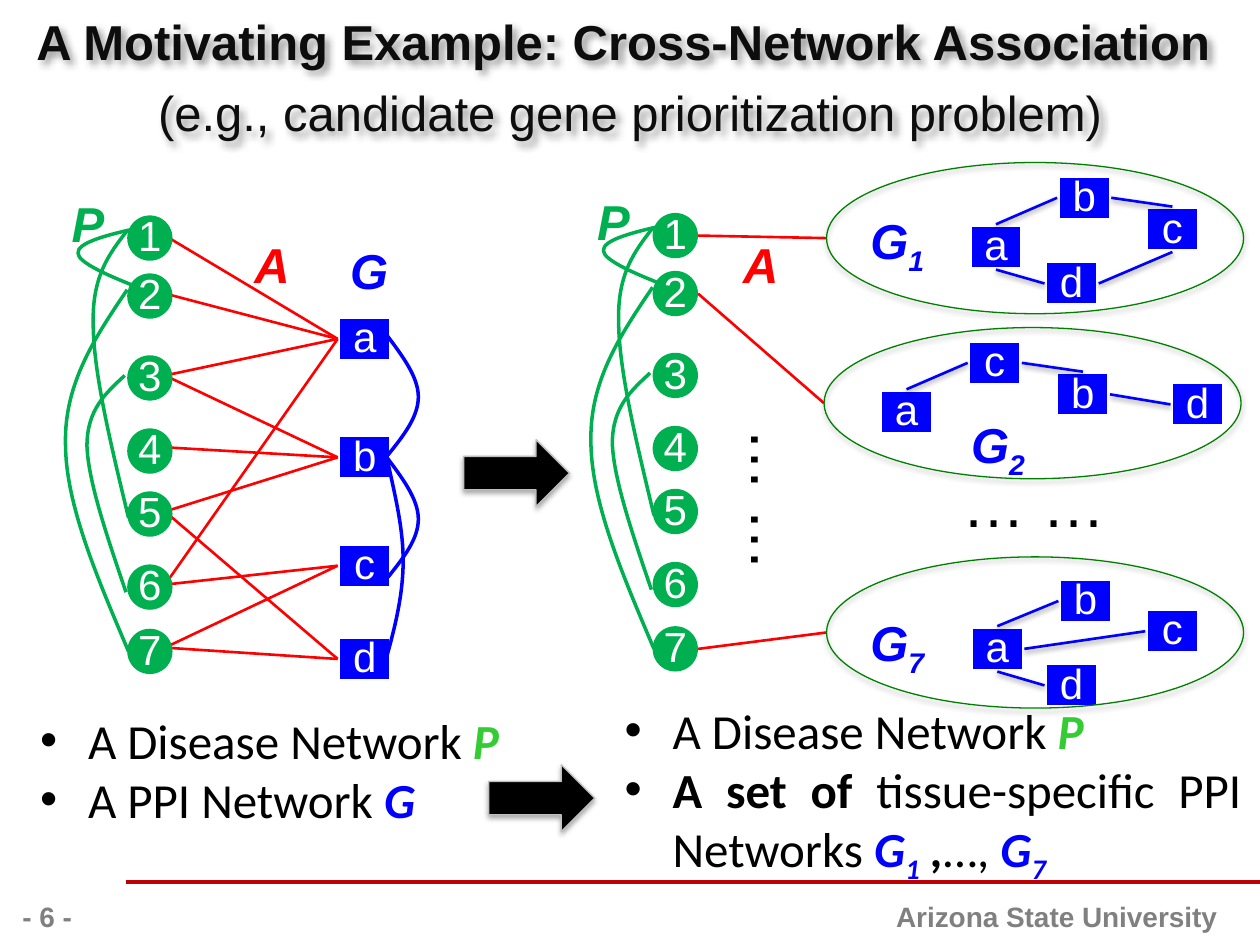
from lxml import etree
from pptx import Presentation
from pptx.dml.color import RGBColor
from pptx.enum.shapes import MSO_CONNECTOR as CONN, MSO_SHAPE as SHAPE
from pptx.enum.text import MSO_ANCHOR as ANCHOR, PP_ALIGN as ALIGN
from pptx.oxml import parse_xml
from pptx.oxml.ns import nsdecls, qn
from pptx.util import Inches, Pt

COLORS = {
    "black": "000000", "white": "FFFFFF", "title": "0D0D0D", "gray": "808080",
    "silver": "BFBFBF", "rule": "C00000", "red": "FF0000", "blue": "0000FF",
    "green": "00B050", "lime": "33CC33", "oval": "008000",
}
NODE, GENE_W, GENE_H = 0.36, 0.43, 0.36
BOLD_ITALIC = {"bold": True, "italic": True}


def rgb(name):
    return RGBColor.from_string(COLORS[name])


def shadow_xml(alpha, blur, dist, angle=90):
    return parse_xml(
        f'<a:effectLst {nsdecls("a")}><a:outerShdw blurRad="{Pt(blur)}" '
        f'dist="{Pt(dist)}" dir="{angle * 60000}" rotWithShape="0">'
        f'<a:srgbClr val="{COLORS["black"]}"><a:alpha val="{alpha * 1000}"/>'
        f'</a:srgbClr></a:outerShdw></a:effectLst>')


def add_text(p, text, size=28, color="black", font="Arial", bold=False,
             italic=False, sub=False):
    r = p.add_run()
    r.text = text
    r.font.size, r.font.name = Pt(size), font
    r.font.bold, r.font.italic = bold, italic
    r.font.color.rgb = rgb(color)
    if sub:
        r._r.get_or_add_rPr().set("baseline", "-25000")
    return r


class Diagram:
    def __init__(self, slide):
        self.s = slide

    def box(self, x, y, w, h, align=ALIGN.LEFT, wrap=True):
        sp = self.s.shapes.add_textbox(Inches(x), Inches(y), Inches(w), Inches(h))
        sp.text_frame.word_wrap = wrap
        sp.text_frame.paragraphs[0].alignment = align
        return sp

    def label(self, x, y, text, color, w=0.5, sub=None):
        p = self.box(x, y, w, 0.57, wrap=False).text_frame.paragraphs[0]
        add_text(p, text, color=color, **BOLD_ITALIC)
        if sub:
            add_text(p, sub, color=color, sub=True, **BOLD_ITALIC)

    def dots(self, x, y, rotation=0):
        sp = self.box(x, y, 1.35, 0.71, wrap=False)
        sp.rotation = rotation
        add_text(sp.text_frame.paragraphs[0], "… …", size=36)

    def bullets(self, x, y, h, items):
        tf = self.box(x, y, 5.59, h).text_frame
        for i, runs in enumerate(items):
            p = tf.add_paragraph() if i else tf.paragraphs[0]
            p.alignment, p.level = ALIGN.JUSTIFY, 1
            ppr = p._p.get_or_add_pPr()
            ppr.set("marL", str(Inches(0.88)))
            ppr.set("indent", str(Inches(-0.38)))
            etree.SubElement(ppr, qn("a:buFont"), typeface="Arial")
            etree.SubElement(ppr, qn("a:buChar"), char="•")
            for text, fmt in runs:
                add_text(p, text, font="Calibri", **fmt)

    def shape(self, kind, x, y, w, h, fill=None, line=None, width=1, shadow=False):
        sp = self.s.shapes.add_shape(kind, Inches(x), Inches(y), Inches(w), Inches(h))
        sp.shadow.inherit = False
        if fill:
            sp.fill.solid()
            sp.fill.fore_color.rgb = rgb(fill)
        else:
            sp.fill.background()
        if line:
            sp.line.color.rgb, sp.line.width = rgb(line), Pt(width)
        else:
            sp.line.fill.background()
        if shadow:
            sppr = sp._element.spPr
            sppr.replace(sppr.find(qn("a:effectLst")), shadow_xml(35, 3.1, 1.8))
        return sp

    def node(self, kind, text, x, y, w, h, **style):
        tf = self.shape(kind, x, y, w, h, **style).text_frame
        tf.margin_left = tf.margin_right = tf.margin_top = 0
        tf.margin_bottom = Inches(0.05)
        tf.vertical_anchor = ANCHOR.MIDDLE
        tf.paragraphs[0].alignment = ALIGN.CENTER
        add_text(tf.paragraphs[0], text, size=24, color="white")

    def gene(self, text, x, y):
        self.node(SHAPE.RECTANGLE, text, x, y, GENE_W, GENE_H,
                  fill="blue", line="white", width=3)

    def line(self, start, end, color, width=1.5, shadow=False):
        ln = self.s.shapes.add_connector(
            CONN.STRAIGHT, *(Inches(v) for v in (*start, *end)))
        ln.line.color.rgb, ln.line.width = rgb(color), Pt(width)
        ln._element.spPr.append(shadow_xml(38, 3.1, 1.6) if shadow else
                                parse_xml(f'<a:effectLst {nsdecls("a")}/>'))

    def curve(self, color, start, *beziers):
        """Draw joined cubic Béziers, each given as six coordinates."""
        points = [(Inches(b[i]), Inches(b[i + 1])) for b in beziers for i in (0, 2, 4)]
        builder = self.s.shapes.build_freeform(Inches(start[0]), Inches(start[1]))
        builder.add_line_segments(points, close=False)
        sp = builder.convert_to_shape()
        # Turn every three line segments into one cubic segment
        segments = list(sp._element.spPr.iter(qn("a:lnTo")))
        for i in range(0, len(segments), 3):
            cubic = etree.Element(qn("a:cubicBezTo"))
            segments[i].addprevious(cubic)
            for segment in segments[i:i + 3]:
                cubic.append(segment[0])
                segment.getparent().remove(segment)
        sp.shadow.inherit = False
        sp.fill.background()
        sp.line.color.rgb, sp.line.width = rgb(color), Pt(2)

    def disease_network(self, dx, dy):
        for i, y in enumerate((1.71, 2.17, 2.82, 3.4, 3.9, 4.48, 4.99), 1):
            self.node(SHAPE.OVAL, str(i), 1.01 + dx, y + dy, NODE, NODE, fill="green")
        links = (
            ((1.01, 1.83), (0.87, 2.01, 0.73, 2.19, 0.74, 2.57),
             (0.74, 2.95, 0.88, 3.53, 1.02, 4.11)),
            ((0.99, 2.98), (0.84, 3.12, 0.69, 3.25, 0.69, 3.54),
             (0.7, 3.82, 0.85, 4.26, 1, 4.7)),
            ((1.01, 2.3), (0.76, 2.67, 0.51, 3.04, 0.52, 3.52),
             (0.52, 4, 0.77, 4.58, 1.02, 5.17)),
            ((1.05, 1.82), (0.83, 1.87, 0.61, 1.93, 0.62, 2.01),
             (0.62, 2.08, 0.84, 2.18, 1.07, 2.27)),
        )
        for link in links:
            self.curve("green", *([v + (dy if i % 2 else dx) for i, v in enumerate(part)]
                                  for part in link))
        self.label(0.47 + dx, 1.49 + dy, "P", "green", w=0.46)

    def tissue_network(self, x, y, sub, label_at, genes, edges):
        """Edges read like 'at bl': top of gene a to left of gene b."""
        self.label(*label_at, "G", "blue", w=0.73, sub=sub)
        for name, at in genes.items():
            self.gene(name, *at)
        sides = {"l": (0, 0.5), "r": (1, 0.5), "t": (0.5, 0), "b": (0.5, 1)}
        for edge in edges:
            ends = []
            for name, side in edge.split():
                (gx, gy), (fx, fy) = genes[name], sides[side]
                ends.append((gx + fx * GENE_W, gy + fy * GENE_H))
            self.line(*ends, "blue", shadow=True)
        self.shape(SHAPE.OVAL, x, y, 3.31, 1.2, line="oval", width=0.75, shadow=True)


def main():
    prs = Presentation()
    prs.slide_width, prs.slide_height = Inches(10), Inches(7.5)
    d = Diagram(prs.slides.add_slide(prs.slide_layouts[6]))

    # Footer and title
    d.line((1, 7), (10, 7), "rule", 2)
    for x, w, align, text in ((4.92, 4.84, ALIGN.RIGHT, "Arizona State University"),
                              (0, 0.75, ALIGN.CENTER, "- 6 -")):
        p = d.box(x, 7.09, w, 0.41, align).text_frame.paragraphs[0]
        add_text(p, text, size=16, color="gray", bold=True)
    title = d.box(0, 0.12, 10, 0.88, ALIGN.CENTER)
    title._element.spPr.append(shadow_xml(40, 4, 3, angle=45))
    tf = title.text_frame
    tf.margin_left = tf.margin_right = tf.margin_top = tf.margin_bottom = 0
    tf.vertical_anchor = ANCHOR.MIDDLE
    p = tf.paragraphs[0]
    p.line_spacing = 1.2
    add_text(p, "A Motivating Example: Cross-Network Association ", color="title", bold=True)
    p.add_line_break()
    add_text(p, "(e.g., candidate gene prioritization problem)", color="title")

    # Left: one disease network linked to one gene network
    gene_y = {"a": 2.51, "b": 3.45, "c": 4.31, "d": 5.05}
    for name, y in gene_y.items():
        d.gene(name, 2.68, y)
    disease_y = (1.87, 2.33, 2.98, 3.55, 4.06, 4.64, 5.14)
    for y, targets in zip(disease_y, ("a", "a", "ab", "b", "bd", "ac", "cd")):
        for name in targets:
            d.line((1.31, y), (2.68, gene_y[name] + GENE_H / 2), "red")
    for y in (2.66, 3.63):
        d.curve("blue", (3.07, y), (3.19, y + 0.16, 3.32, y + 0.33, 3.32, y + 0.49),
                (3.32, y + 0.65, 3.2, y + 0.8, 3.08, y + 0.95))
    d.curve("blue", (3.07, 3.63), (3.13, 3.91, 3.2, 4.18, 3.2, 4.45),
            (3.2, 4.71, 3.14, 4.96, 3.07, 5.21))
    d.label(2.68, 1.86, "G", "blue")
    d.label(1.92, 1.81, "A", "red")
    d.disease_network(0, 0)

    # Right: each disease linked to its own tissue-specific network
    for start, end in (((5.54, 1.87), (6.56, 1.89)), ((5.54, 2.33), (6.54, 3.2)),
                       ((5.54, 5.15), (6.56, 5.02))):
        d.line(start, end, "red")
    d.disease_network(4.17, -0.02)
    d.label(5.8, 1.81, "A", "red")
    d.tissue_network(6.56, 1.29, "1", (6.81, 1.62),
                     {"a": (7.69, 1.78), "b": (8.39, 1.39), "d": (8.29, 2.07), "c": (9.09, 1.64)},
                     ("at bl", "br ct", "ab dl", "dr cb"))
    d.tissue_network(6.54, 2.6, "2", (7.61, 3.24),
                     {"a": (6.98, 3.09), "c": (7.68, 2.7), "d": (9.29, 3.03), "b": (8.38, 2.95)},
                     ("at cl", "cr bt", "dl br"))
    d.tissue_network(6.56, 4.42, "7", (6.81, 4.81),
                     {"a": (7.7, 4.97), "b": (8.4, 4.59), "d": (8.29, 5.26), "c": (9.09, 4.83)},
                     ("at bl", "cl ar", "ab dl"))
    d.dots(7.54, 3.64)
    d.dots(5.48, 3.62, rotation=90)

    # Arrows and captions
    for x, y in ((3.68, 3.49), (3.88, 6.07)):
        d.shape(SHAPE.RIGHT_ARROW, x, y, 0.84, 0.53, "black", "silver", 0.75, shadow=True)
    blue = {"color": "blue", **BOLD_ITALIC}
    disease = [("A Disease Network ", {}), ("P", {"color": "lime", **BOLD_ITALIC})]
    d.bullets(-0.28, 5.59, 1.04, [disease, [("A PPI Network ", {}), ("G", blue)]])
    d.bullets(4.36, 5.51, 1.51, [disease, [
        ("A set of ", {"bold": True}), ("tissue-specific PPI Networks ", {}),
        ("G", blue), ("1", {**blue, "sub": True}), (" ,", BOLD_ITALIC),
        ("…, ", {}), ("G", blue), ("7", {**blue, "sub": True})]])

    prs.save("out.pptx")


if __name__ == "__main__":
    main()
